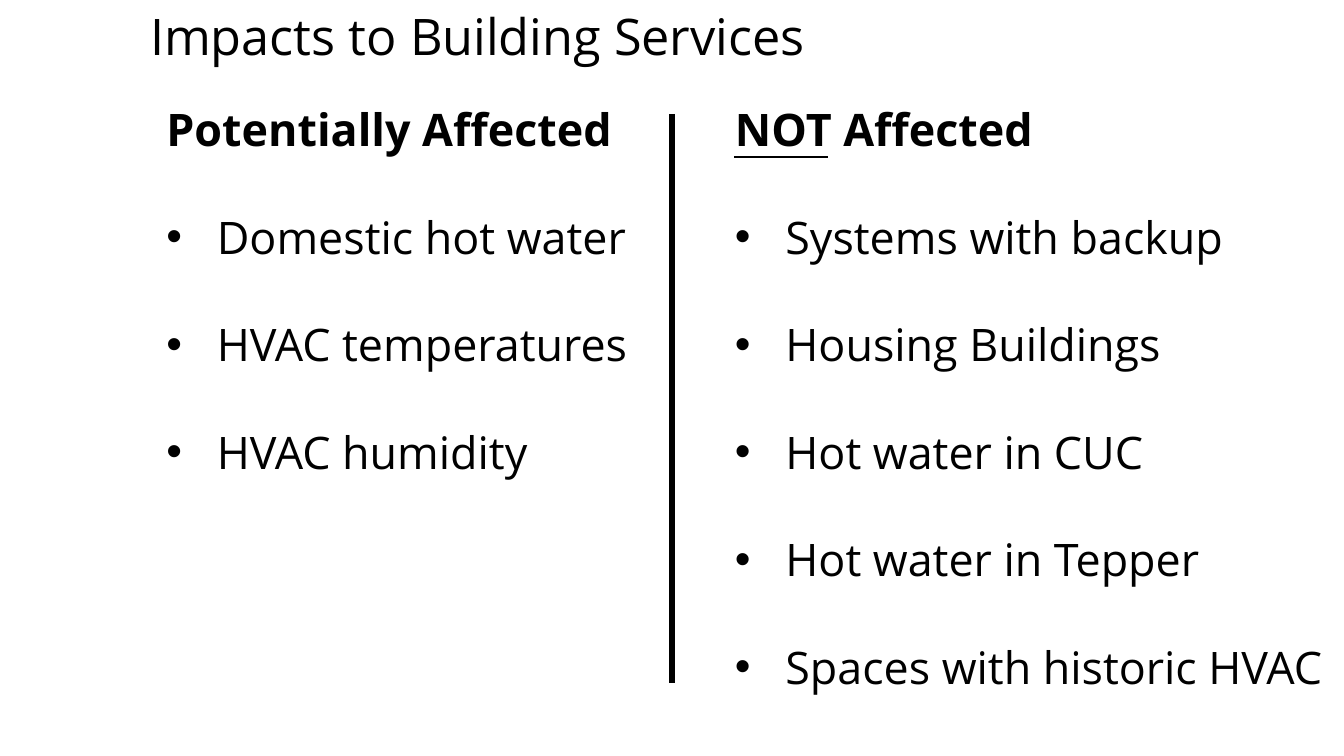
from lxml import etree
from pptx import Presentation
from pptx.dml.color import RGBColor
from pptx.enum.shapes import MSO_CONNECTOR, MSO_SHAPE
from pptx.enum.text import MSO_ANCHOR, PP_ALIGN
from pptx.oxml.ns import qn
from pptx.util import Inches, Pt

SLIDE_WIDTH, SLIDE_HEIGHT = 13.33, 7.5
FONT = "Open Sans"
BLACK, WHITE = "000000", "FFFFFF"
COLUMN_TOP, COLUMN_HEIGHT = 0.93, 6.02
COLUMN_SIZE, TITLE_SIZE = 32, 36
ROW_GAP = 1.2 * COLUMN_SIZE  # one line of text between list rows


def color(hex_value):
    return RGBColor.from_string(hex_value)


def add_panel(slide, box, side_inset, top_inset):
    """White rectangle that holds left-aligned text from its top edge."""
    shape = slide.shapes.add_shape(MSO_SHAPE.RECTANGLE, *map(Inches, box))
    shape.shadow.inherit = False
    shape.fill.solid()
    shape.fill.fore_color.rgb = color(WHITE)
    shape.line.fill.background()
    frame = shape.text_frame
    frame.word_wrap = True
    frame.vertical_anchor = MSO_ANCHOR.TOP
    frame.margin_left = frame.margin_right = Inches(side_inset)
    frame.margin_top = Inches(top_inset)
    frame.margin_bottom = 0
    return frame


def add_run(paragraph, text, size, bold=False):
    paragraph.alignment = PP_ALIGN.LEFT
    run = paragraph.add_run()
    run.text = text
    run.font.name = FONT
    run.font.size = Pt(size)
    run.font.bold = bold
    run.font.color.rgb = color(BLACK)


def add_bullet(paragraph, indent=0.5):
    properties = paragraph._p.get_or_add_pPr()
    properties.set("marL", str(Inches(indent)))
    properties.set("indent", str(-Inches(indent)))
    etree.SubElement(properties, qn("a:buFont")).set("typeface", "Arial")
    etree.SubElement(properties, qn("a:buChar")).set("char", "•")


def add_rule(slide, start, end, width):
    line = slide.shapes.add_connector(
        MSO_CONNECTOR.STRAIGHT, *map(Inches, (*start, *end)))
    line.line.color.rgb = color(BLACK)
    line.line.width = Pt(width)
    etree.SubElement(line._element.spPr, qn("a:effectLst"))


def add_title(slide, box, text):
    frame = add_panel(slide, box, side_inset=0.1, top_inset=0.05)
    add_run(frame.paragraphs[0], text, TITLE_SIZE)


def add_column(slide, box, heading, items):
    frame = add_panel(slide, box, side_inset=0.05, top_inset=0.08)
    add_run(frame.paragraphs[0], heading, COLUMN_SIZE, bold=True)
    for item in items:
        paragraph = frame.add_paragraph()
        add_bullet(paragraph)
        paragraph.space_before = Pt(ROW_GAP)
        add_run(paragraph, item, COLUMN_SIZE)


def add_impacts_slide(presentation):
    slide = presentation.slides.add_slide(presentation.slide_layouts[6])

    # Left column and title
    add_column(slide, (1.6, COLUMN_TOP, 5.69, COLUMN_HEIGHT), "Potentially Affected",
               ["Domestic hot water", "HVAC temperatures", "HVAC humidity"])
    add_title(slide, (1.39, 0, 10.76, 0.71), "Impacts to Building Services")

    # Right column with its underlined first word
    right = 7.24
    add_column(slide, (right, COLUMN_TOP, 6.07, COLUMN_HEIGHT), "NOT Affected",
               ["Systems with backup", "Housing Buildings", "Hot water in CUC",
                "Hot water in Tepper", "Spaces with historic HVAC"])
    underline = COLUMN_TOP + 0.63
    add_rule(slide, (right + 0.04, underline), (right + 0.97, underline), 1.5)

    # Divider in the middle of the slide
    middle = SLIDE_WIDTH / 2
    add_rule(slide, (middle, COLUMN_TOP + 0.2),
             (middle, COLUMN_TOP + COLUMN_HEIGHT - 0.17), 4.5)


def main():
    presentation = Presentation()
    presentation.slide_width = Inches(SLIDE_WIDTH)
    presentation.slide_height = Inches(SLIDE_HEIGHT)
    add_impacts_slide(presentation)
    presentation.save("out.pptx")


if __name__ == "__main__":
    main()
